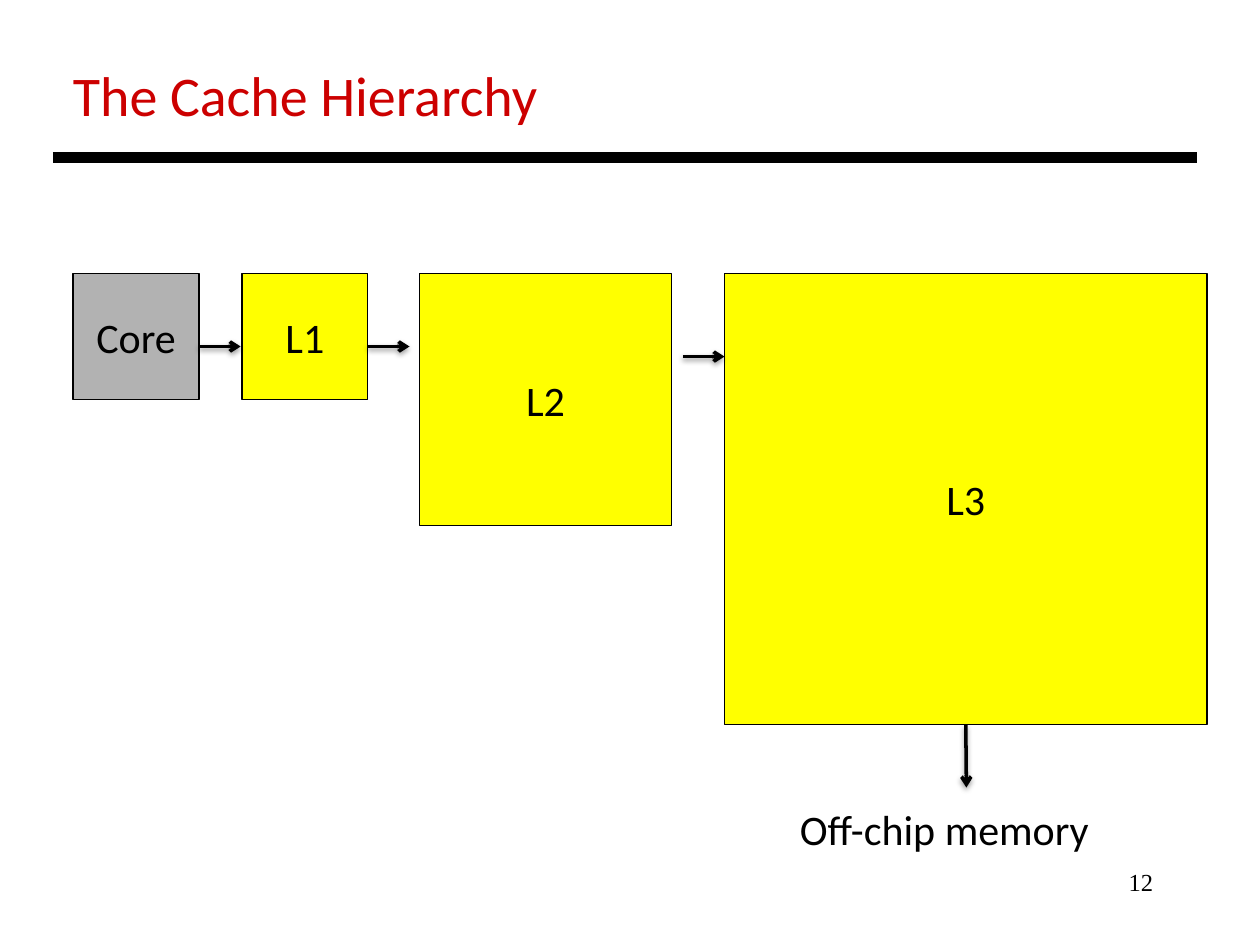
from pptx import Presentation
from pptx.dml.color import RGBColor
from pptx.enum.shapes import MSO_CONNECTOR, MSO_SHAPE
from pptx.enum.text import MSO_ANCHOR, MSO_AUTO_SIZE, PP_ALIGN
from pptx.oxml import parse_xml
from pptx.oxml.ns import nsdecls
from pptx.util import Inches, Pt

RECTANGLE = MSO_SHAPE.RECTANGLE
STRAIGHT = MSO_CONNECTOR.STRAIGHT
MIDDLE, TOP = MSO_ANCHOR.MIDDLE, MSO_ANCHOR.TOP
LEFT, CENTER, RIGHT = PP_ALIGN.LEFT, PP_ALIGN.CENTER, PP_ALIGN.RIGHT
FIT_SHAPE = MSO_AUTO_SIZE.SHAPE_TO_FIT_TEXT
BOTTOM_SIDE = 2

COLORS = {"ink": "000000", "title": "CC0000", "core": "B2B2B2", "cache": "FFFF00"}
SHADOW = (
    '<a:outerShdw blurRad="39370" dist="20320" dir="5400000" rotWithShape="0">'
    '<a:srgbClr val="000000"><a:alpha val="38000"/></a:srgbClr></a:outerShdw>'
)


class SlideBuilder:
    """Holds the slide and its style, and draws each kind of element."""

    def __init__(self, slide, font="Calibri", size=24):
        self.slide = slide
        self.font = font
        self.size = size

    def color(self, name):
        return RGBColor.from_string(COLORS[name])

    def add_words(self, frame, text, align, anchor, size=None, color="ink", font=None):
        frame.word_wrap = False
        frame.vertical_anchor = anchor
        para = frame.paragraphs[0]
        para.alignment = align
        span = para.add_run()
        span.text = text
        span.font.name = font or self.font
        span.font.size = Pt(size or self.size)
        span.font.color.rgb = self.color(color)

    def text(self, text, left, top, width, height, align=LEFT, **style):
        box = self.slide.shapes.add_textbox(
            Inches(left), Inches(top), Inches(width), Inches(height))
        self.add_words(box.text_frame, text, align, TOP, **style)
        return box

    def label(self, *args, **style):
        self.text(*args, **style).text_frame.auto_size = FIT_SHAPE

    def block(self, text, left, top, width, height, fill):
        box = self.slide.shapes.add_shape(
            RECTANGLE, Inches(left), Inches(top), Inches(width), Inches(height))
        box.shadow.inherit = False
        box.fill.solid()
        box.fill.fore_color.rgb = self.color(fill)
        box.line.color.rgb = self.color("ink")
        box.line.width = Pt(0.75)
        self.add_words(box.text_frame, text, CENTER, MIDDLE)
        return box

    def line(self, start, end, width, effect=""):
        line = self.slide.shapes.add_connector(
            STRAIGHT, *(Inches(value) for value in (*start, *end)))
        line.line.color.rgb = self.color("ink")
        line.line.width = Pt(width)
        line._element.spPr.append(parse_xml(
            f'<a:effectLst {nsdecls("a")}>{effect}</a:effectLst>'))
        return line

    def arrow(self, start, end):
        arrow = self.line(start, end, 2, SHADOW)
        arrow.line._get_or_add_ln().append(
            parse_xml(f'<a:tailEnd {nsdecls("a")} type="arrow"/>'))
        return arrow


def main():
    deck = Presentation()
    deck.slide_width, deck.slide_height = Inches(10), Inches(7.5)
    page = SlideBuilder(deck.slides.add_slide(deck.slide_layouts[6]))

    page.text("12", 7.17, 6.83, 2.08, 0.5, align=RIGHT, size=14, font="Times New Roman")
    page.label("The Cache Hierarchy", 0.48, 0.43, 3.93, 0.64, size=32, color="title")
    page.line((0.42, 1.25), (9.5, 1.25), 6)

    blocks = {}
    for name, left, width, height, fill in (
        ("Core", 0.58, 1, 1, "core"),
        ("L1", 1.92, 1, 1, "cache"),
        ("L2", 3.33, 2, 2, "cache"),
        ("L3", 5.75, 3.83, 3.58, "cache"),
    ):
        blocks[name] = page.block(name, left, 2.17, width, height, fill)

    for left, top in ((1.58, 2.75), (2.92, 2.75), (5.42, 2.83)):
        page.arrow((left, top), (left + 0.33, top))
    memory_arrow = page.arrow((7.67, 5.75), (7.67, 6.25))
    memory_arrow.begin_connect(blocks["L3"], BOTTOM_SIDE)

    page.label("Off-chip memory", 6.25, 6.33, 2.53, 0.5)
    deck.save("out.pptx")


if __name__ == "__main__":
    main()
